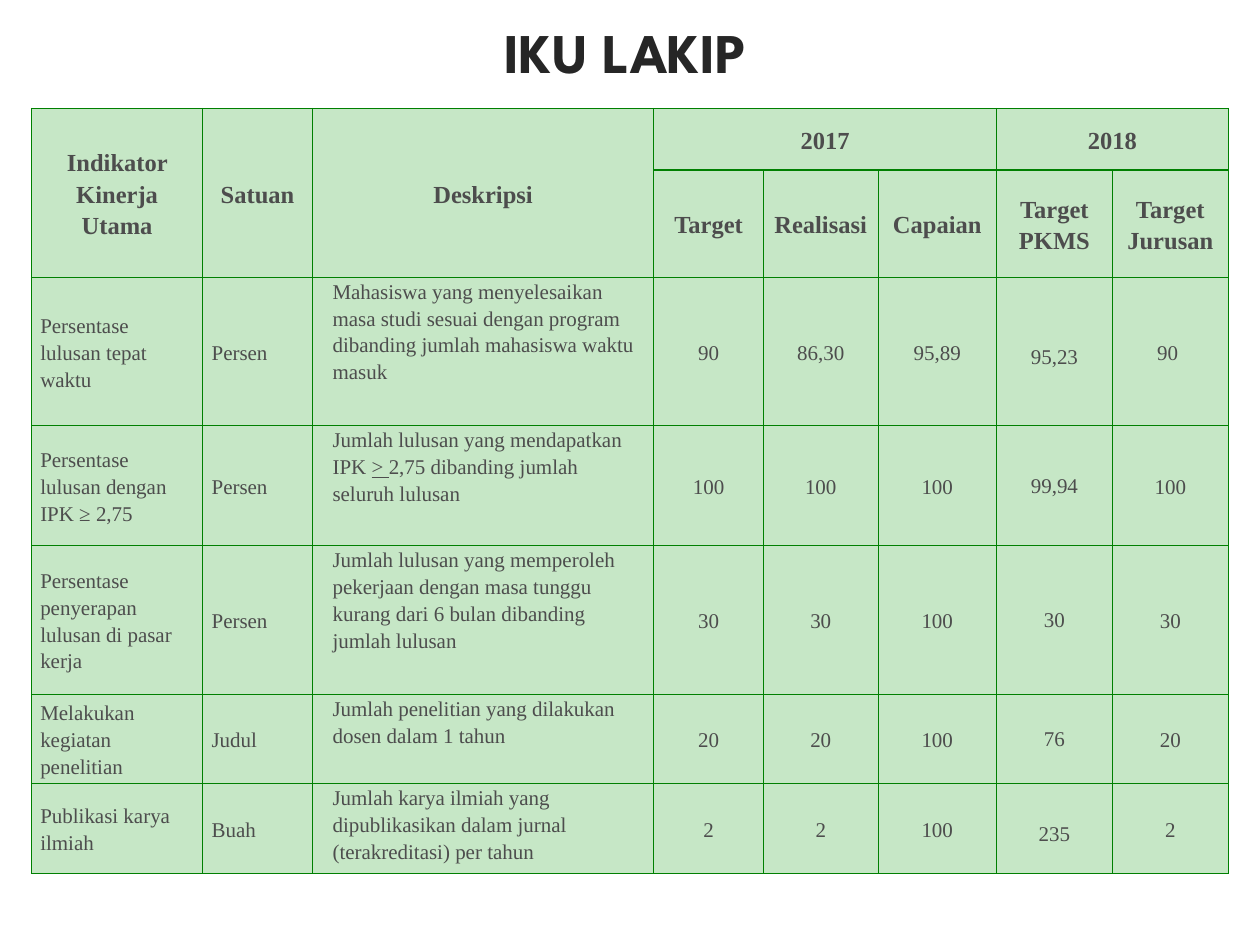
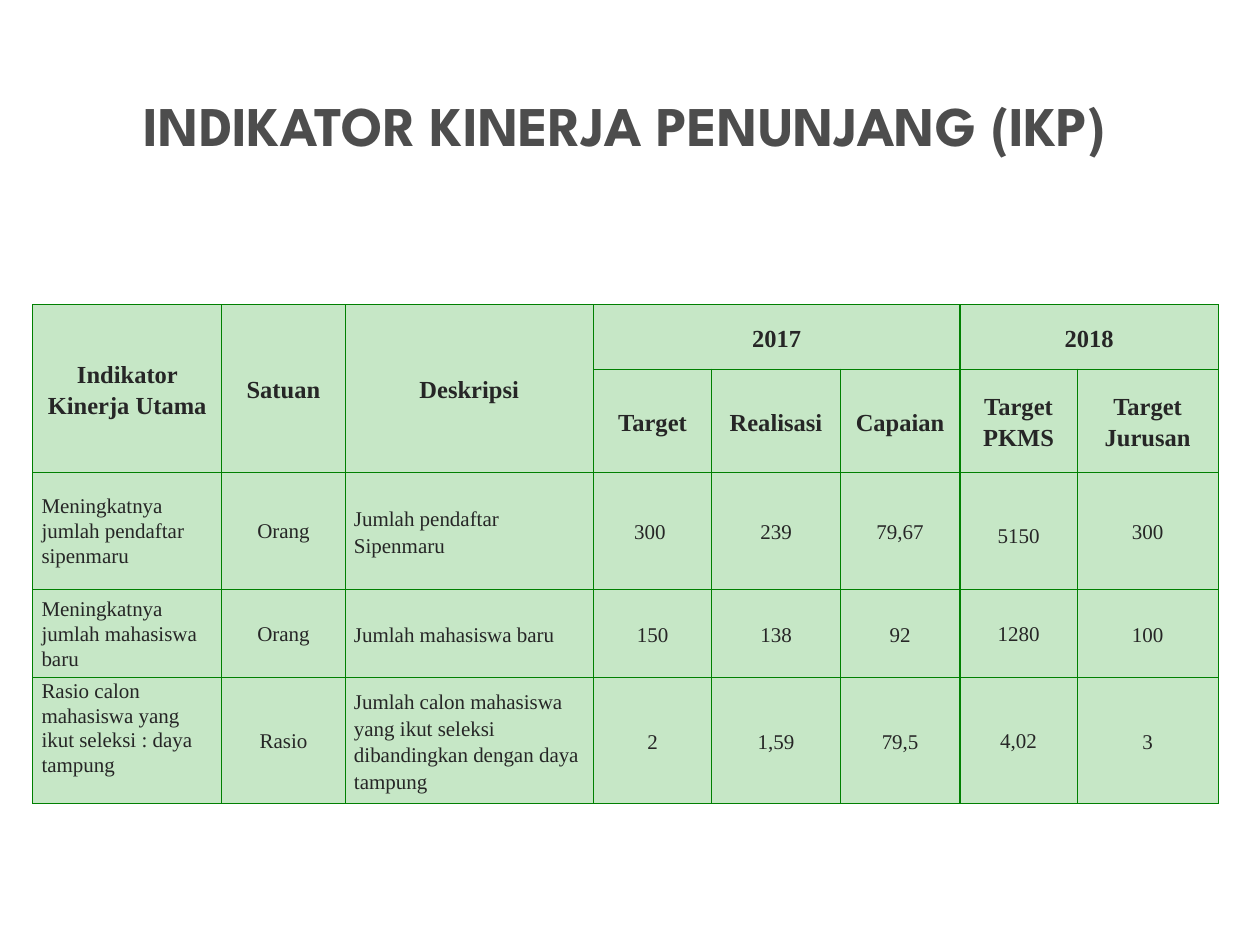
from dataclasses import dataclass, replace

import pptx
import pptx.dml.color
import pptx.enum.text
import pptx.oxml
import pptx.oxml.ns
import pptx.util

Inches = pptx.util.Inches
Pt = pptx.util.Pt
ALIGN = pptx.enum.text.PP_ALIGN
ANCHOR = pptx.enum.text.MSO_ANCHOR


@dataclass(frozen=True)
class Theme:
    title_font: str = "League Spartan"
    table_font: str = "Times New Roman"
    dark: str = "262626"
    grey: str = "4D4D4D"
    cell_fill: str = "C6E7C6"
    border: str = "008001"
    border_width: float = 0.75
    title_size: int = 32
    header_size: int = 14
    body_size: int = 12


@dataclass(frozen=True)
class CellStyle:
    align: int = ALIGN.CENTER
    anchor: int = ANCHOR.MIDDLE
    spacing: float = 1.15
    indent: float = 0
    size: int = Theme.body_size
    bold: bool = False


THEME = Theme()
NUMBER = CellStyle()
HEADER = CellStyle(size=THEME.header_size, bold=True)
LABEL = CellStyle(align=ALIGN.LEFT)
TIGHT_LABEL = replace(LABEL, spacing=1.07)
TIGHT_NUMBER = replace(NUMBER, spacing=1.07)
LOOSE_NUMBER = replace(NUMBER, spacing=1.5)
DESCRIPTION = replace(LABEL, anchor=ANCHOR.TOP, indent=0.09)

TALL_HEADERS = ["Indikator Kinerja Utama", "Satuan", "Deskripsi"]
YEARS = [("2017", 3, 5), ("2018", 6, 7)]
SUB_HEADERS = ["Target", "Realisasi", "Capaian", "Target PKMS", "Target Jurusan"]
HEADER_ROWS = 2
PKMS_COL = 6

IKU_ROWS = [
    ["Persentase lulusan tepat waktu", "Persen",
     "Mahasiswa yang menyelesaikan masa studi sesuai dengan program dibanding "
     "jumlah mahasiswa waktu masuk", "90", "86,30", "95,89", "95,23", "90 "],
    ["Persentase lulusan dengan IPK ≥ 2,75", "Persen",
     [("Jumlah lulusan yang mendapatkan IPK ", False), ("> ", True),
      ("2,75 dibanding jumlah seluruh lulusan", False)],
     "100", "100", "100", "99,94", "100"],
    ["Persentase penyerapan lulusan di pasar kerja", "Persen",
     "Jumlah lulusan yang memperoleh pekerjaan dengan masa tunggu kurang dari "
     "6 bulan dibanding jumlah lulusan", "30", "30", "100", "30", "30"],
    ["Melakukan kegiatan penelitian", "Judul",
     "Jumlah penelitian yang dilakukan dosen dalam 1 tahun",
     "20", "20", "100", "76", "20"],
    ["Publikasi karya ilmiah", "Buah",
     "Jumlah karya ilmiah yang dipublikasikan dalam jurnal (terakreditasi) per tahun",
     "2", "2", "100", "235", "2"],
]
IKP_ROWS = [
    ["Meningkatnya jumlah pendaftar sipenmaru", "Orang", "Jumlah pendaftar Sipenmaru",
     "300 ", "239", "79,67", "5150", "300"],
    ["Meningkatnya jumlah mahasiswa baru", "Orang", "Jumlah mahasiswa baru",
     "150", "138", "92", "1280", "100"],
    ["Rasio calon mahasiswa yang ikut seleksi : daya tampung", "Rasio",
     "Jumlah calon mahasiswa yang ikut seleksi dibandingkan dengan daya tampung",
     "2", "1,59", "79,5", "4,02", "3"],
]


def rgb(value):
    return pptx.dml.color.RGBColor.from_string(value)


def add_run(p, text, font, size, color, bold):
    r = p.add_run()
    r.text = text
    r.font.name = font
    r.font.size = Pt(size)
    r.font.bold = bold
    r.font.color.rgb = rgb(color)
    return r


def add_title_slide(prs, title, top, color):
    """Add a title-only slide with its title band at the given top."""
    s = prs.slides.add_slide(prs.slide_layouts[5])
    sp = s.shapes.title
    sp.left, sp.top, sp.width, sp.height = map(Inches, (0.28, top, 9.37, 0.87))
    tf = sp.text_frame
    tf.auto_size = pptx.enum.text.MSO_AUTO_SIZE.NONE
    tf.word_wrap = True
    tf.vertical_anchor = ANCHOR.MIDDLE
    p = tf.paragraphs[0]
    p.alignment = ALIGN.CENTER
    add_run(p, title, THEME.title_font, THEME.title_size, color, True)
    return s


def paint_cell(cell):
    """Give a cell its four borders, then its fill (the order the schema needs)."""
    tc_pr = cell._tc.get_or_add_tcPr()
    for side in ("lnL", "lnR", "lnT", "lnB"):
        tc_pr.append(pptx.oxml.parse_xml(
            f'<a:{side} {pptx.oxml.ns.nsdecls("a")} w="{Pt(THEME.border_width)}">'
            f'<a:solidFill><a:srgbClr val="{THEME.border}"/></a:solidFill></a:{side}>'))
    cell.fill.solid()
    cell.fill.fore_color.rgb = rgb(THEME.cell_fill)


def write_cell(cell, content, style, color):
    """Write a string, or a list of (text, underlined) runs."""
    cell.vertical_anchor = style.anchor
    cell.margin_left = cell.margin_right = Inches(0.07)
    cell.margin_top = cell.margin_bottom = 0
    p = cell.text_frame.paragraphs[0]
    p.alignment = style.align
    p.line_spacing = style.spacing
    if style.indent:
        p._p.get_or_add_pPr().set("marL", str(Inches(style.indent)))
    runs = [(content, False)] if isinstance(content, str) else content
    for text, underlined in runs:
        r = add_run(p, text, THEME.table_font, style.size, color, style.bold)
        if underlined:
            r.font.underline = True


def write_headers(table, color):
    for col, text in enumerate(TALL_HEADERS):
        table.cell(0, col).merge(table.cell(1, col))
        write_cell(table.cell(0, col), text, HEADER, color)
    for year, first, last in YEARS:
        table.cell(0, first).merge(table.cell(0, last))
        write_cell(table.cell(0, first), year, HEADER, color)
    for col, text in enumerate(SUB_HEADERS, len(TALL_HEADERS)):
        write_cell(table.cell(1, col), text, HEADER, color)


def add_indicator_table(s, left, top, widths, heights, rows, text_styles, special, color):
    """text_styles covers the three text columns; special maps (row, column) to a style."""
    frame = s.shapes.add_table(len(heights), len(widths), Inches(left), Inches(top),
                               Inches(sum(widths)), Inches(sum(heights)))
    table = frame.table
    table.first_row = table.horz_banding = False
    for column, width in zip(table.columns, widths):
        column.width = Inches(width)
    for row, height in zip(table.rows, heights):
        row.height = Inches(height)
    for cell in table.iter_cells():
        paint_cell(cell)
    write_headers(table, color)

    styles = text_styles + [NUMBER] * len(SUB_HEADERS)
    styles[PKMS_COL] = TIGHT_NUMBER
    for i, values in enumerate(rows):
        for col, value in enumerate(values):
            style = special.get((i, col), styles[col])
            write_cell(table.cell(i + HEADER_ROWS, col), value, style, color)


def main():
    prs = pptx.Presentation()
    prs.slide_width, prs.slide_height = Inches(10), Inches(7.5)

    s = add_title_slide(prs, "IKU LAKIP", -0.03, THEME.dark)
    add_indicator_table(
        s, 0.25, 0.86,
        [1.36, 0.87, 2.71, 0.87, 0.91, 0.94, 0.92, 0.92],
        [0.49, 0.85, 1.18, 0.95, 1.18, 0.71, 0.71],
        IKU_ROWS, [LABEL, LABEL, DESCRIPTION],
        {(0, PKMS_COL): LOOSE_NUMBER, (4, PKMS_COL): LOOSE_NUMBER}, THEME.grey)

    s = add_title_slide(prs, "INDIKATOR KINERJA PENUNJANG (IKP)", 0.55, THEME.grey)
    add_indicator_table(
        s, 0.26, 2.42,
        [1.5, 0.98, 1.97, 0.94, 1.02, 0.95, 0.93, 1.12],
        [0.51, 0.82, 0.93, 0.7, 1],
        IKP_ROWS, [TIGHT_LABEL, TIGHT_NUMBER, LABEL],
        {(0, PKMS_COL): LOOSE_NUMBER,
         (2, 0): replace(TIGHT_LABEL, anchor=ANCHOR.TOP)}, THEME.dark)

    prs.save("out.pptx")


if __name__ == "__main__":
    main()
